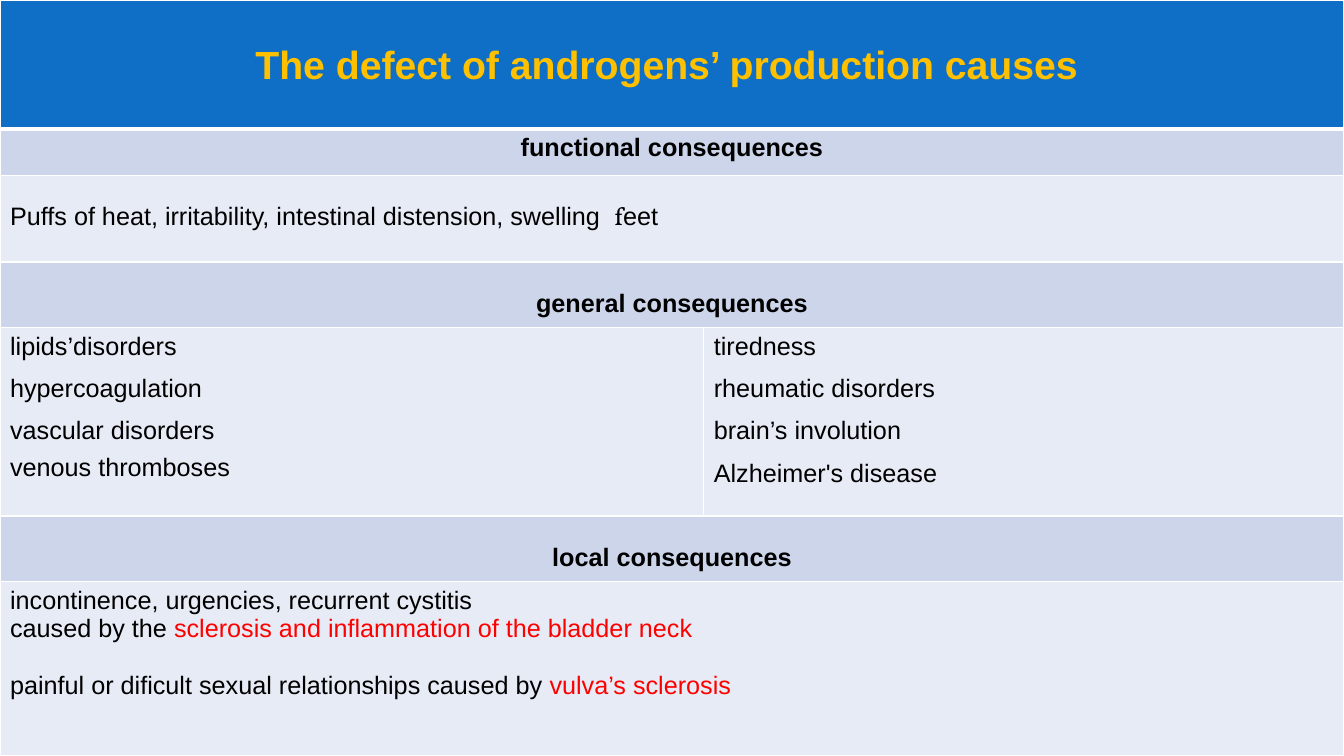
"""Builds a slide with one full-page table of the consequences of an androgen defect."""
from lxml.etree import SubElement
from pptx import Presentation
from pptx.dml.color import RGBColor
from pptx.enum.text import PP_ALIGN as Align
from pptx.oxml.ns import qn
from pptx.util import Inches, Pt

COLUMNS = [6.98, 6.35]
BLUE, BAND, PALE = "0F6FC6", "CCD5EA", "E7EBF5"
BLACK, RED, GOLD, WHITE = "000000", "FF0000", "FFC000", "FFFFFF"
TIGHT = {"line_spacing": Pt(13.2)}
CENTER = {"alignment": Align.CENTER}
LIST = {"space_after": Pt(10)}
TITLE = {"size": Pt(28), "bold": True, "color": GOLD}
HEADING = {"bold": True}
ALERT = {"color": RED}

# Row: height, fill, top margin, cells; cell: paragraphs; paragraph: format, spans
ROWS = [
    (1.28, BLUE, 0.69, [[({**CENTER, **TIGHT}, [("The defect of androgens’ production causes ", TITLE)])]]),
    (0.46, BAND, 0.05, [[(CENTER, [("functional consequences", HEADING)])]]),
    (0.86, PALE, 0.42, [[(TIGHT, [
        ("Puffs of heat, irritability, intestinal distension, swelling  ", {}),
        ("f", {"name": "Vollkorn"}),
        ("eet", {}),
    ])]]),
    (0.65, BAND, 0.37, [[({**CENTER, **TIGHT}, [("general consequences", HEADING)])]]),
    (1.87, PALE, 0.05, [
        [
            (LIST, [("lipids’disorders", {})]),
            (LIST, [("hypercoagulation", {})]),
            ({}, [("vascular disorders", {})]),
            ({"space_before": Pt(6)}, [("venous thromboses", {})]),
        ],
        [(LIST, [(line, {})]) for line in (
            "tiredness", "rheumatic disorders", "brain’s involution", "Alzheimer's disease")],
    ]),
    (0.65, BAND, 0.37, [[({**CENTER, **TIGHT}, [("local consequences", HEADING)])]]),
    (1.73, PALE, 0.05, [[
        ({}, [("incontinence, urgencies, recurrent cystitis", {})]),
        ({}, [("caused by the ", {}), ("sclerosis and inflammation of the bladder neck", ALERT)]),
        ({"space_before": Pt(20.7)}, [
            ("painful or dificult sexual relationships caused by ", {}),
            ("vulva’s sclerosis", ALERT),
        ]),
    ]]),
]


def paint(fill, color):
    fill.solid()
    fill.fore_color.rgb = RGBColor.from_string(color)


def apply(target, values):
    for name, value in values.items():
        setattr(target, name, value)


def add_borders(cell, widths):
    properties = cell._tc.get_or_add_tcPr()
    for side, width in widths.items():
        line = SubElement(properties, qn(f"a:ln{side}"), w=str(Pt(width)))
        SubElement(SubElement(line, qn("a:solidFill")), qn("a:srgbClr"), val=WHITE)


def write(cell, paragraphs):
    frame = cell.text_frame
    for index, (layout, spans) in enumerate(paragraphs):
        para = frame.add_paragraph() if index else frame.paragraphs[0]
        apply(para, layout)
        for text, style in spans:
            span = para.add_run()
            span.text = text
            values = {"name": "Arial", "size": Pt(18), "bold": False, "color": BLACK, **style}
            paint(span.font.fill, values.pop("color"))
            apply(span.font, values)


def main():
    deck = Presentation()
    deck.slide_width, deck.slide_height = Inches(13.33), Inches(7.5)
    page = deck.slides.add_slide(deck.slide_layouts[6])
    table = page.shapes.add_table(
        len(ROWS), len(COLUMNS), 0, 0, deck.slide_width, deck.slide_height).table
    apply(table, {"first_row": False, "horz_banding": False})
    for column, width in zip(table.columns, COLUMNS):
        column.width = Inches(width)
    for index, (height, color, top, contents) in enumerate(ROWS):
        table.rows[index].height = Inches(height)
        cells = list(table.rows[index].cells)
        for cell in cells:
            add_borders(cell, {"L": 1, "R": 1, "T": 3 if index == 1 else 1, "B": 3 if index == 0 else 1})
            paint(cell.fill, color)
            apply(cell, {"margin_top": Inches(top), "margin_bottom": 0})
        if len(contents) == 1:
            cells[0].merge(cells[-1])
        for cell, paragraphs in zip(cells, contents):
            write(cell, paragraphs)
    deck.save("out.pptx")


if __name__ == "__main__":
    main()
